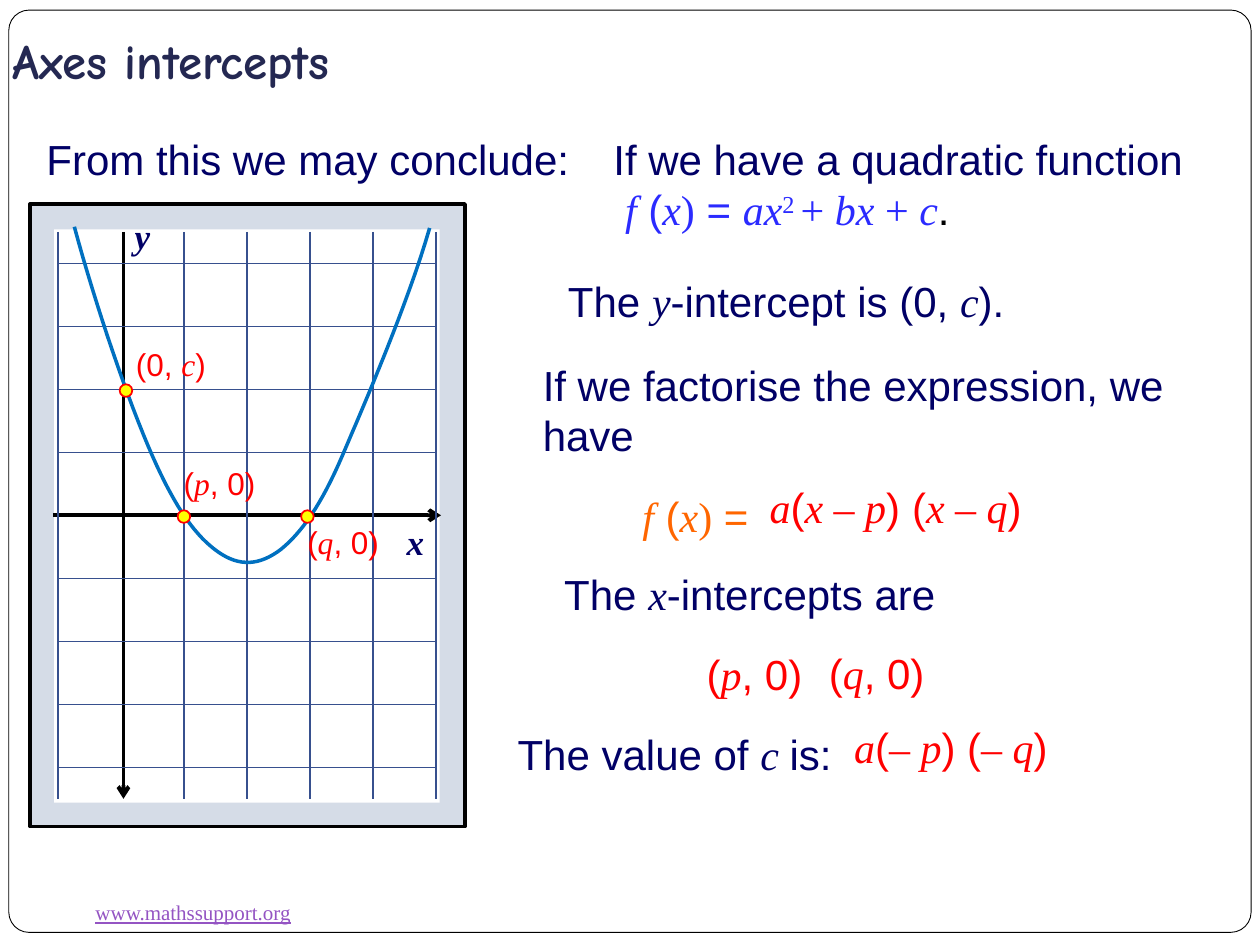
from lxml import etree
from pptx import Presentation
from pptx.dml.color import RGBColor
from pptx.enum.shapes import MSO_CONNECTOR as CONN, MSO_SHAPE as SHAPE
from pptx.enum.text import MSO_ANCHOR as ANCHOR, MSO_AUTO_SIZE as AUTO, PP_ALIGN as ALIGN
from pptx.oxml.ns import qn
from pptx.util import Inches, Pt

COLORS = {"white": "FFFFFF", "black": "000000", "navy": "010066", "title": "242852",
          "link": "9454C3", "panel": "D5DCE7", "grid": "37508E", "curve": "0070C0",
          "red": "FF0000", "yellow": "FFFF00", "blue": "2B2BFF", "orange": "FF6600"}
STYLES = {
    "a": {"name": "Arial"},
    "t": {"name": "Times New Roman"},
    "i": {"name": "Times New Roman", "italic": True},
    "b": {"name": "Times New Roman", "italic": True, "bold": True},
    "u": {"name": "Times New Roman", "underline": True},
    "h": {"name": "Comic Neue", "bold": True},
    "sup": {"name": "Times New Roman"},
}


def rgb(color):
    return RGBColor.from_string(COLORS[color])


def add_runs(p, runs, size, color):
    for style, text in runs:
        r = p.add_run()
        r.text = text
        for key, value in STYLES[style].items():
            setattr(r.font, key, value)
        r.font.size = Pt(size)
        r.font.color.rgb = rgb(color)
        if style == "sup":
            r.font._element.set("baseline", "30000")


def add_text(s, box, runs, size=24, color="navy", wrap=False):
    tf = s.shapes.add_textbox(*map(Inches, box)).text_frame
    tf.word_wrap = wrap
    tf.auto_size = AUTO.SHAPE_TO_FIT_TEXT
    add_runs(tf.paragraphs[0], runs, size, color)
    return tf


def set_line(sp, color, width):
    sp.line.color.rgb = rgb(color)
    sp.line.width = Pt(width)


def add_shape(s, kind, box, fill, line=None, width=1):
    sp = s.shapes.add_shape(kind, *map(Inches, box))
    sp.shadow.inherit = False
    sp.fill.solid()
    sp.fill.fore_color.rgb = rgb(fill)
    if line:
        set_line(sp, line, width)
    else:
        sp.line.fill.background()
    return sp


def add_line(s, x1, y1, x2, y2, color, width, arrow=False):
    cn = s.shapes.add_connector(CONN.STRAIGHT, *map(Inches, (x1, y1, x2, y2)))
    set_line(cn, color, width)
    if arrow:
        etree.SubElement(cn.line._get_or_add_ln(), qn("a:tailEnd"), type="arrow")
    etree.SubElement(cn._element.spPr, qn("a:effectLst"))


def add_curve(s, x, y, start, segments, steps=16):
    points = [start]
    for c1, c2, end in segments:
        first = points[-1]
        for n in range(1, steps + 1):
            t = n / steps
            weights = ((1 - t) ** 3, 3 * t * (1 - t) ** 2, 3 * t * t * (1 - t), t ** 3)
            points.append(tuple(sum(k * q[axis] for k, q in zip(weights, (first, c1, c2, end)))
                                for axis in (0, 1)))
    emu = [(Inches(x + px), Inches(y + py)) for px, py in points]
    fb = s.shapes.build_freeform(*emu[0])
    fb.add_line_segments(emu[1:], close=False)
    sp = fb.convert_to_shape()
    sp.shadow.inherit = False
    sp.fill.background()
    set_line(sp, "curve", 2)


def build_frame(s, box):
    x, y, w, h = box
    title = s.shapes.title
    frame = add_shape(s, SHAPE.ROUNDED_RECTANGLE, (x, y, w, h), "white", "black", 0.5)
    frame.adjustments[0] = 0.022
    title._element.addprevious(frame._element)
    add_text(s, (x + 0.59, y + 7.01, 1.77, 0.3), [("u", "www.mathssupport.org")], 12, "link")


def build_title(s, box):
    title = s.shapes.title
    title.left, title.top, title.width, title.height = map(Inches, box)
    tf = title.text_frame
    layout = {"margin_left": Inches(0.1), "margin_right": Inches(0.1),
              "margin_top": Inches(0.05), "margin_bottom": Inches(0.1),
              "vertical_anchor": ANCHOR.BOTTOM, "auto_size": AUTO.NONE, "word_wrap": True}
    for key, value in layout.items():
        setattr(tf, key, value)
    p = tf.paragraphs[0]
    p.alignment = ALIGN.LEFT
    add_runs(p, [("h", "Axes intercepts")], 28, "title")


def build_graph(s, box):
    x, y, w, h = box
    cell, left, top = 0.5, x + 0.22, y + 0.22
    axis_x, axis_y = x + 0.74, y + 2.47
    add_shape(s, SHAPE.RECTANGLE, box, "panel", "black", 2.25)
    add_shape(s, SHAPE.RECTANGLE, (x + 0.19, y + 0.2, w - 0.39, h - 0.39), "white")
    add_line(s, x + 0.18, axis_y, x + 3.26, axis_y, "black", 2.25, arrow=True)
    add_line(s, axis_x, top, axis_x, top + 4.5, "black", 2.25, arrow=True)
    add_text(s, (x + 2.89, y + 2.46, 0.34, 0.43), [("b", "x")], 20)
    add_text(s, (x + 0.73, y + 0.03, 0.32, 0.43), [("b", "y")], 20)
    for col in (0, 2, 3, 4, 5, 6):
        gx = left + col * cell
        add_line(s, gx, top, gx, top + 4.5, "grid", 0.75)
    for row in (0, 1, 2, 3, 5, 6, 7, 8):
        gy = axis_y + (row - 4) * cell
        add_line(s, left, gy, left + 3, gy, "grid", 0.75)
    add_curve(s, x, y, (0.35, 0.18), [
        ((0.52, 0.81), (0.78, 1.57), (0.97, 2.0)),
        ((1.16, 2.43), (1.32, 2.64), (1.49, 2.76)),
        ((1.66, 2.88), (1.82, 2.87), (1.99, 2.74)),
        ((2.15, 2.61), (2.31, 2.39), (2.48, 1.99)),
        ((2.65, 1.59), (2.99, 0.81), (3.17, 0.19))])
    for dx, dy, width, runs in (
            (2.1, 2.48, 0.79, [("a", "("), ("i", "q"), ("a", ", 0)")]),
            (1.12, 2.01, 0.79, [("a", "("), ("i", "p"), ("a", ", 0)")]),
            (0.74, 1.07, 0.76, [("a", "(0, "), ("i", "c"), ("a", ")")])):
        add_text(s, (x + dx, y + dy, width, 0.4), runs, 18, "red")
    for dx, dy in ((1.17, 2.43), (2.15, 2.43), (0.71, 1.43)):
        add_shape(s, SHAPE.OVAL, (x + dx, y + dy, 0.1, 0.1), "yellow", "red")


def build_explanation(s, box):
    x, y, w, h = box
    tf = add_text(s, (x + 0.76, y, 4.77, 0.91), [("a", "If we have a quadratic function")])
    p = tf.add_paragraph()
    add_runs(p, [("a", " ")], 24, "navy")
    add_runs(p, [("i", "f"), ("a", " ("), ("i", "x"), ("t", ")"), ("a", " = "), ("i", "ax"),
                 ("sup", "2 "), ("t", "+ "), ("i", "bx"), ("t", " + "), ("i", "c")], 24, "blue")
    add_runs(p, [("a", ".")], 24, "black")
    for dx, dy, width, height, color, wrap, runs in (
            (0.4, 1.13, 5.53, 0.5, "navy", True,
             [("a", "The "), ("i", "y"), ("a", "-intercept is (0, "), ("i", "c"), ("a", ").")]),
            (0.2, 1.79, 5.73, 0.91, "navy", True,
             [("a", "If we factorise the expression, we have")]),
            (0.99, 2.83, 1.05, 0.5, "orange", False,
             [("i", "f"), ("a", " ("), ("i", "x"), ("t", ")"), ("a", " =")]),
            (2.0, 2.76, 1.29, 0.5, "red", False,
             [("i", "a"), ("a", "("), ("i", "x "), ("t", "– "), ("i", "p"), ("a", ")")]),
            (3.13, 2.76, 1.1, 0.5, "red", False,
             [("a", "("), ("i", "x "), ("t", "– "), ("i", "q"), ("a", ")")]),
            (0.37, 3.45, 5.53, 0.5, "navy", True,
             [("a", "The "), ("i", "x"), ("a", "-intercepts are")]),
            (1.5, 4.09, 0.99, 0.5, "red", False, [("a", "("), ("i", "p"), ("a", ", 0)")]),
            (2.47, 4.08, 0.99, 0.5, "red", False, [("a", "("), ("i", "q"), ("a", ", 0)")]),
            (0, 4.72, 2.74, 0.5, "navy", True,
             [("a", "The value of "), ("i", "c "), ("a", "is:")]),
            (2.67, 4.67, 1.98, 0.5, "red", True,
             [("i", "a"), ("a", "("), ("t", "– "), ("i", "p"), ("a", ") ("), ("t", "– "),
              ("i", "q"), ("a", ")")])):
        add_text(s, (x + dx, y + dy, width, height), runs, 24, color, wrap)


def main():
    prs = Presentation()
    prs.slide_width, prs.slide_height = Inches(10), Inches(7.5)
    s = prs.slides.add_slide(prs.slide_layouts[5])
    build_frame(s, (0.07, 0.08, 9.86, 7.32))
    build_title(s, (0, 0.3, 9, 0.51))
    add_text(s, (0.27, 1.01, 4.5, 0.5), [("a", "From this we may conclude:")], wrap=True)
    build_graph(s, (0.24, 1.62, 3.45, 4.94))
    build_explanation(s, (4.01, 1.01, 5.93, 5.22))
    prs.save("out.pptx")


if __name__ == "__main__":
    main()
